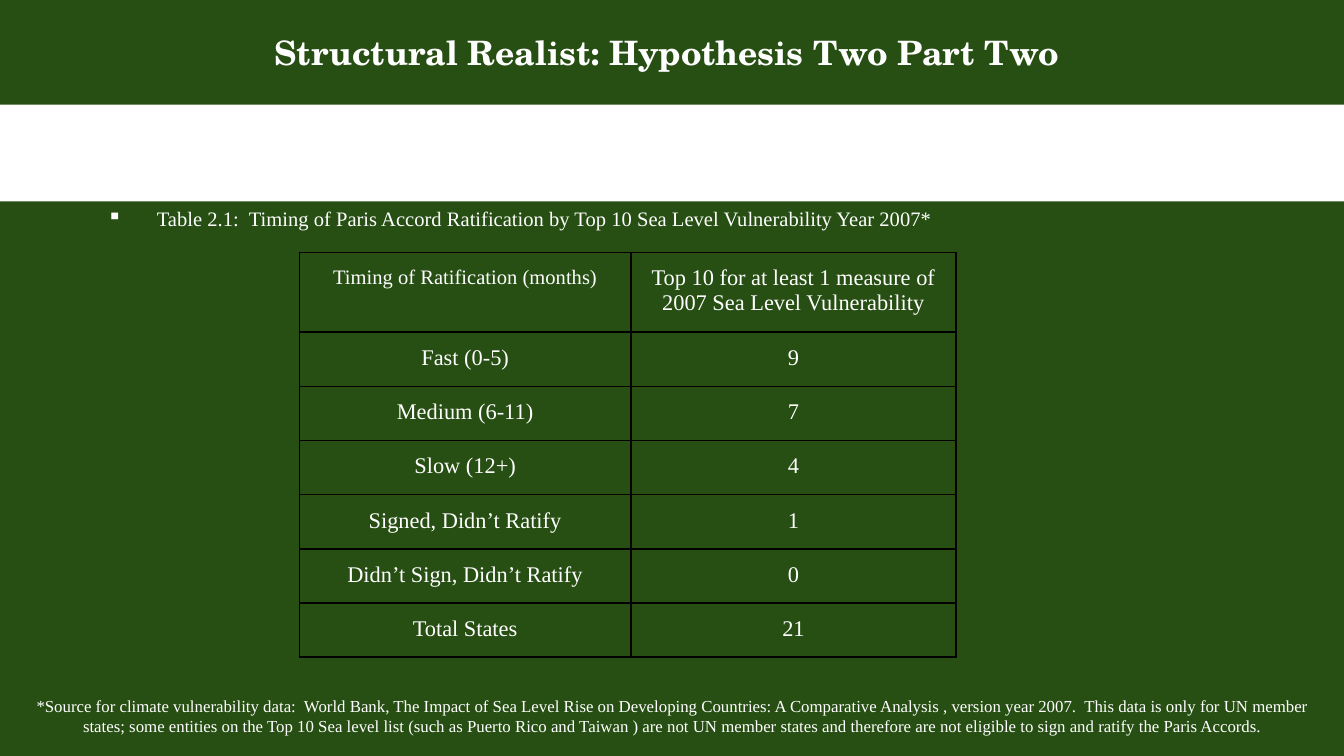
from lxml.etree import SubElement
from pptx import Presentation
from pptx.dml.color import RGBColor
from pptx.enum.shapes import MSO_SHAPE as SHAPE
from pptx.enum.text import MSO_ANCHOR as ANCHOR, MSO_AUTO_SIZE as FIT, PP_ALIGN as ALIGN
from pptx.oxml.ns import qn
from pptx.util import Pt

GREEN = RGBColor(0x27, 0x4E, 0x13)
WHITE = RGBColor(0xFF, 0xFF, 0xFF)
BLACK = RGBColor(0x00, 0x00, 0x00)
SERIF, HEADING = "Times New Roman", "TeX Gyre Schola"

TITLE = "Structural Realist: Hypothesis Two Part Two "
CAPTION = "Table 2.1:  Timing of Paris Accord Ratification by Top 10 Sea Level Vulnerability Year 2007*"
SOURCE = (
    "*Source for climate vulnerability data:  World Bank, The Impact of Sea Level Rise on "
    "Developing Countries: A Comparative Analysis , version year 2007.  This data is only for "
    "UN member states; some entities on the Top 10 Sea level list (such as Puerto Rico and "
    "Taiwan ) are not UN member states and therefore are not eligible to sign and ratify the "
    "Paris Accords."
)
ROWS = [
    ("Timing of Ratification (months)", "Top 10 for at least 1 measure of 2007 Sea Level Vulnerability"),
    ("Fast (0-5)", "9"),
    ("Medium (6-11)", "7"),
    ("Slow (12+)", "4"),
    ("Signed, Didn’t Ratify", "1"),
    ("Didn’t Sign, Didn’t Ratify", "0"),
    ("Total States", "21"),
]


class Deck:
    """Holds the style and the current slide, with a method for each kind of element."""

    def __init__(self, width, height):
        self.prs = Presentation()
        self.prs.slide_width, self.prs.slide_height = Pt(width), Pt(height)
        self.font = {"name": SERIF, "bold": False}
        self.frame = {"word_wrap": True, "auto_size": FIT.NONE}
        self.inset = 7.2

    def add_slide(self):
        self.s = self.prs.slides.add_slide(self.prs.slide_layouts[5])
        fill = self.s.background.fill
        fill.solid()
        fill.fore_color.rgb = GREEN

    def apply(self, obj, **values):
        for name, value in values.items():
            setattr(obj, name, value)

    def margins(self, obj, side):
        self.apply(obj, margin_left=Pt(side), margin_right=Pt(side),
                   margin_top=Pt(self.inset), margin_bottom=Pt(self.inset))

    def add_words(self, tf, text, size, align=ALIGN.CENTER, **font):
        p = tf.paragraphs[0]
        p.alignment = align
        r = p.add_run()
        r.text = text
        self.apply(r.font, **{**self.font, "size": Pt(size), **font})
        r.font.color.rgb = WHITE
        return p

    def fill_frame(self, sp, text, size, anchor=ANCHOR.MIDDLE, **style):
        tf = sp.text_frame
        self.apply(tf, **self.frame, vertical_anchor=anchor)
        self.margins(tf, self.inset)
        return self.add_words(tf, text, size, **style)

    def title(self, box, text, size):
        sp = self.s.shapes.title
        self.apply(sp, **dict(zip(("left", "top", "width", "height"), map(Pt, box))))
        self.fill_frame(sp, text, size, name=HEADING, bold=True)

    def band(self, box, color):
        sp = self.s.shapes.add_shape(SHAPE.RECTANGLE, *map(Pt, box))
        sp.shadow.inherit = False
        sp.fill.solid()
        sp.fill.fore_color.rgb = color
        sp.line.fill.background()

    def text(self, box, text, size, **style):
        sp = self.s.shapes.add_textbox(*map(Pt, box))
        return self.fill_frame(sp, text, size, **style)

    def bullet(self, box, text, size):
        p = self.text(box, text, size, anchor=ANCHOR.TOP, align=ALIGN.LEFT)
        p.line_spacing = 1.07
        pPr = p._p.get_or_add_pPr()
        pPr.set("marL", str(Pt(36)))
        pPr.set("indent", str(-Pt(26.64)))
        color = SubElement(pPr, qn("a:buClr"))
        SubElement(color, qn("a:srgbClr"), val=str(WHITE))
        SubElement(pPr, qn("a:buChar"), char="▪")

    def borders(self, cell):
        tcPr = cell._tc.get_or_add_tcPr()
        for side in ("lnL", "lnR", "lnT", "lnB"):
            ln = SubElement(tcPr, qn(f"a:{side}"), w=str(Pt(1)))
            fill = SubElement(ln, qn("a:solidFill"))
            SubElement(fill, qn("a:srgbClr"), val=str(BLACK))

    def table(self, left, top, widths, heights, rows):
        box = map(Pt, (left, top, sum(widths), sum(heights)))
        tbl = self.s.shapes.add_table(len(rows), len(widths), *box).table
        self.apply(tbl, first_row=False, horz_banding=False)
        for col, width in zip(tbl.columns, widths):
            col.width = Pt(width)
        for i, (row, height) in enumerate(zip(tbl.rows, heights)):
            row.height = Pt(height)
            for j, cell in enumerate(row.cells):
                corner = i == j == 0
                self.margins(cell, 5)
                self.borders(cell)
                cell.fill.background()
                p = self.add_words(cell.text_frame, rows[i][j], 11 if corner else 12)
                if corner:
                    p.space_after = Pt(8)


def main():
    deck = Deck(720, 405)
    deck.add_slide()
    deck.band((0, 56, 720, 52), WHITE)
    deck.title((80, 0, 560, 56), TITLE, 18)
    deck.bullet((41, 102.2, 654, 251), CAPTION, 11)
    deck.text((1.4, 368, 717, 31), SOURCE, 9)
    deck.table(160.4, 135.2, (177.6, 174.2), [42.8] + [29] * 6, ROWS)
    deck.prs.save("out.pptx")


if __name__ == "__main__":
    main()
